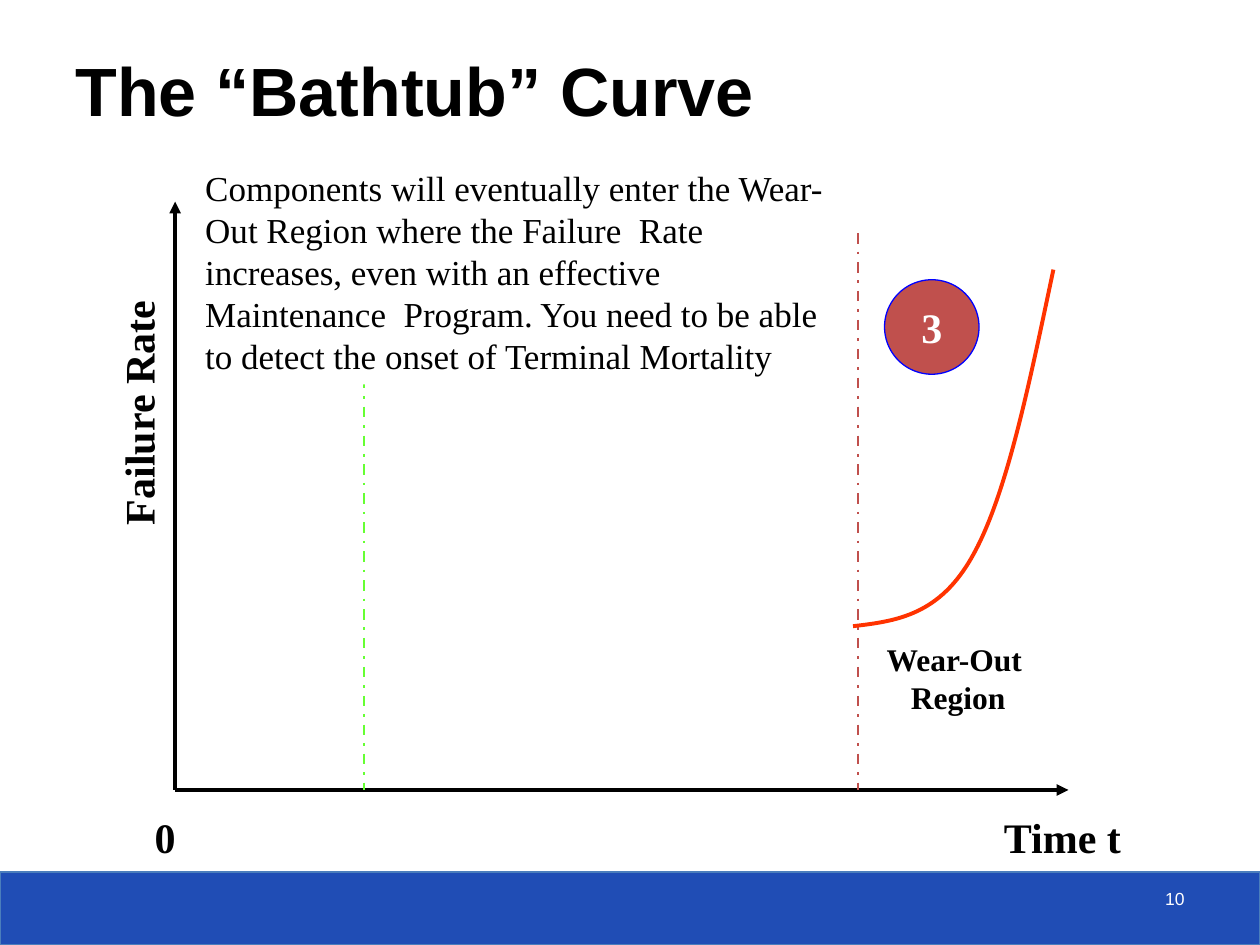
from dataclasses import dataclass

from pptx import Presentation
from pptx.dml.color import RGBColor as RGB
from pptx.enum.dml import MSO_LINE as Dash
from pptx.enum.shapes import MSO_CONNECTOR as Conn, MSO_SHAPE as Shape
from pptx.enum.text import MSO_ANCHOR as Anchor, PP_ALIGN as Align
from pptx.oxml.ns import qn
from pptx.util import Inches, Pt
from lxml.etree import SubElement


@dataclass(frozen=True)
class Theme:
    black: str = "000000"
    white: str = "FFFFFF"
    blue: str = "204DB5"
    edge: str = "4B7EBC"
    green: str = "66FF33"
    brick: str = "C0504D"
    ring: str = "0000FF"
    red: str = "FF3300"
    sans: str = "Arial"
    serif: str = "Times New Roman"
    title: float = 39
    label: float = 24
    body: float = 20
    region: float = 18
    number: float = 10
    thin: float = 0.75
    dash: float = 1.5
    thick: float = 2.25


class Deck:
    def __init__(self, theme, slide):
        self.theme = theme
        self.shapes = slide.shapes

    def stroke(self, line, color, width):
        line.color.rgb = RGB.from_string(color)
        line.width = Pt(width)

    def shape(self, kind, box, fill, edge=None):
        item = self.shapes.add_shape(kind, *map(Inches, box))
        item.shadow.inherit = False
        item.fill.solid()
        item.fill.fore_color.rgb = RGB.from_string(fill)
        if edge:
            self.stroke(item.line, edge, self.theme.thin)
        else:
            item.line.fill.background()
        return item

    def label(self, item, lines, size, font=None, color=None, bold=True,
              align=Align.LEFT, anchor=Anchor.TOP, wrap=False):
        frame = item.text_frame
        frame.word_wrap = wrap
        frame.vertical_anchor = anchor
        for i, line in enumerate(lines):
            para = frame.add_paragraph() if i else frame.paragraphs[0]
            para.alignment = align
            run = para.add_run()
            run.text = line
            run.font.name = font or self.theme.serif
            run.font.size = Pt(size)
            run.font.bold = bold
            run.font.color.rgb = RGB.from_string(color or self.theme.black)
        return item

    def text(self, box, lines, size, **style):
        item = self.shapes.add_textbox(*map(Inches, box))
        return self.label(item, lines, size, **style)

    def line(self, start, end, color, width, dash=None, arrow=False):
        item = self.shapes.add_connector(Conn.STRAIGHT, *map(Inches, start + end))
        self.stroke(item.line, color, width)
        if dash:
            item.line.dash_style = dash
        props = item.element.spPr
        if arrow:
            tail = SubElement(props.find(qn("a:ln")), qn("a:tailEnd"))
            tail.set("type", "triangle")
        SubElement(props, qn("a:effectLst"))
        return item

    def curve(self, points, color, width):
        """Draw Bezier arcs: a start point, then three points for each arc."""
        spots = [(Inches(x), Inches(y)) for x, y in points]
        form = self.shapes.build_freeform(*spots[0])
        form.add_line_segments(spots[1:], close=False)
        item = form.convert_to_shape()
        item.shadow.inherit = False
        item.fill.background()
        self.stroke(item.line, color, width)
        steps = list(item.element.iter(qn("a:lnTo")))
        track = steps[0].getparent()
        for i in range(0, len(steps), 3):
            arc = SubElement(track, qn("a:cubicBezTo"))
            for step in steps[i:i + 3]:
                arc.append(step[0])
                track.remove(step)
        return item


def main():
    t = Theme()
    prs = Presentation()
    prs.slide_width, prs.slide_height = Inches(10), Inches(7.5)
    deck = Deck(t, prs.slides.add_slide(prs.slide_layouts[6]))

    deck.shape(Shape.RECTANGLE, (0, 6.92, 10, 0.58), t.blue, t.edge)

    left, base = 1.39, 6.27
    for end in ((8.48, base), (left, 1.6)):
        deck.line((left, base), end, t.black, t.thick, arrow=True)
    for x, color in ((2.89, t.green), (6.81, t.brick)):
        deck.line((x, 1.85), (x, base), color, t.dash, dash=Dash.DASH_DOT)
    deck.text((7.87, 6.39, 1.14, 0.5), ["Time t"], t.label)

    rise = deck.curve([(8.36, 2.14), (8.17, 3.04), (7.99, 3.93), (7.72, 4.41),
                       (7.46, 4.88), (7.12, 4.93), (6.77, 4.97)], t.red, t.thick)
    badge = deck.shape(Shape.OVAL, (7.02, 2.22, 0.75, 0.75), t.brick, t.ring)
    deck.label(badge, ["3"], t.label, color=t.white,
               align=Align.CENTER, anchor=Anchor.MIDDLE)
    region = deck.text((6.93, 5.03, 1.35, 0.71), ["Wear-Out ", "Region"],
                       t.region, align=Align.CENTER)
    deck.shapes.add_group_shape([rise, badge, region])

    rate = deck.text((0.1, 3.02, 1.99, 0.5), ["Failure Rate"], t.label)
    rate.rotation = 270
    deck.text((1.13, 6.39, 0.37, 0.5), ["0"], t.label)

    note = deck.shape(Shape.RECTANGLE, (1.53, 1.27, 5.11, 1.78), t.white)
    deck.label(note, ["Components will eventually enter the Wear-Out Region where "
                      "the Failure  Rate increases, even with an effective "
                      "Maintenance  Program. You need to be able to detect the "
                      "onset of Terminal Mortality"],
               t.body, bold=False, wrap=True)

    title = deck.shape(Shape.RECTANGLE, (0.5, 0.25, 9.22, 0.83), t.white)
    deck.label(title, ["The “Bathtub” Curve"], t.title, font=t.sans,
               anchor=Anchor.BOTTOM, wrap=True)
    deck.text((7.17, 7, 2.33, 0.33), ["10"], t.number, font=t.sans,
              color=t.white, bold=False, align=Align.RIGHT, wrap=True)

    prs.save("out.pptx")


if __name__ == "__main__":
    main()
